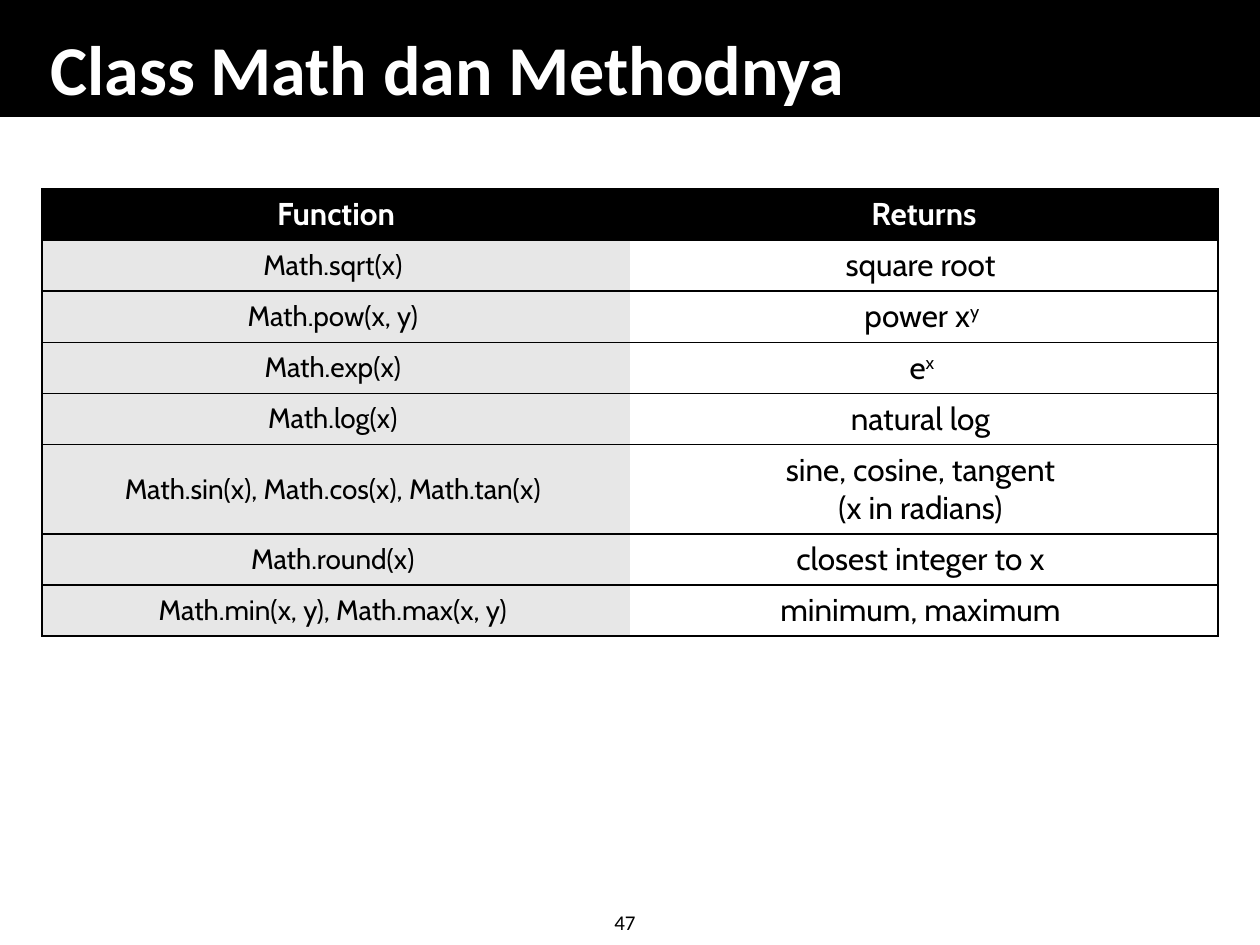
"""Build the slide that lists the methods of the Math class."""
from dataclasses import dataclass

from lxml import etree
from pptx import Presentation
from pptx import util as u
from pptx.dml.color import RGBColor
from pptx.enum import shapes, text
from pptx.oxml.ns import qn
from pptx.slide import Slide

PX = 914400 / 126
BLACK = RGBColor(0, 0, 0)
WHITE = RGBColor(255, 255, 255)
GRAY = RGBColor(0xE7, 0xE7, 0xE7)

HEADER = ("Function", "Returns")
METHODS = [
    ("Math.sqrt(x) ", "square root "),
    ("Math.pow(x, y) ", "power x^y "),
    ("Math.exp(x) ", "e^x "),
    ("Math.log(x) ", "natural log "),
    ("Math.sin(x), Math.cos(x), Math.tan(x) ", "sine, cosine, tangent \n(x in radians) "),
    ("Math.round(x) ", "closest integer to x "),
    ("Math.min(x, y), Math.max(x, y) ", "minimum, maximum "),
]


def px(*lengths):
    """Turn pixel lengths into EMU."""
    return [u.Emu(round(length * PX)) for length in lengths]


@dataclass
class SlideBuilder:
    """Hold the style and the current slide."""

    slide: Slide
    heading_font: str = "Calibri"
    table_font: str = "Cabin"

    def style(self, paragraph, font, size, color, bold=False):
        """Format every run of a paragraph."""
        for run in paragraph.runs:
            run.font.name = font
            run.font.size = u.Pt(size)
            run.font.bold = bold
            run.font.color.rgb = color

    def band(self, *box):
        """Add the black band behind the title."""
        shape = self.slide.shapes.add_shape(shapes.MSO_SHAPE.RECTANGLE, *px(*box))
        shape.shadow.inherit = False
        shape.fill.solid()
        shape.fill.fore_color.rgb = BLACK
        shape.line.color.rgb = BLACK
        shape.line.width = u.Pt(1)

    def title(self, wording, *box):
        """Fill the title placeholder and bring it to the front."""
        shape = self.slide.shapes.title
        shape.left, shape.top, shape.width, shape.height = px(*box)
        frame = shape.text_frame
        frame.text = wording
        frame.auto_size = text.MSO_AUTO_SIZE.NONE
        frame.vertical_anchor = text.MSO_ANCHOR.BOTTOM
        paragraph = frame.paragraphs[0]
        paragraph.alignment = text.PP_ALIGN.LEFT
        self.style(paragraph, self.heading_font, 40, WHITE, True)
        shape.element.getparent().append(shape.element)

    def page_number(self, wording, *box):
        """Add the page number."""
        frame = self.slide.shapes.add_textbox(*px(*box)).text_frame
        frame.text = wording
        frame.word_wrap = False
        self.style(frame.paragraphs[0], self.heading_font, 12, BLACK)

    def borders(self, cell, visible):
        """Draw the visible sides of a cell and hide the others."""
        properties = cell._tc.get_or_add_tcPr()
        for side in "LRTB":
            line = etree.SubElement(properties, qn(f"a:ln{side}"), w=str(u.Pt(1)))
            if side in visible:
                fill = etree.SubElement(line, qn("a:solidFill"))
                etree.SubElement(fill, qn("a:srgbClr"), val=str(BLACK))
            else:
                etree.SubElement(line, qn("a:noFill"))

    def cell(self, cell, wording, size, color, fill, sides, bold=False):
        """Fill one cell; wording after a caret is superscript."""
        base, _, power = wording.partition("^")
        cell.text_frame.text = ""
        paragraph = cell.text_frame.paragraphs[0]
        paragraph.text = base.replace("\n", "\v")
        if power:
            run = paragraph.add_run()
            run.text = power
            run._r.get_or_add_rPr().set("baseline", "30000")
        paragraph.alignment = text.PP_ALIGN.CENTER
        self.style(paragraph, self.table_font, size, color, bold)
        cell.vertical_anchor = text.MSO_ANCHOR.MIDDLE
        self.borders(cell, sides)
        cell.fill.solid()
        cell.fill.fore_color.rgb = fill

    def table(self, header, rows, left, top, width, line_height, tall_height):
        """Add the two-column table."""
        heights = [tall_height if "\n" in row[1] else line_height for row in [header, *rows]]
        frame = self.slide.shapes.add_table(
            len(heights), 2, *px(left, top, width, sum(heights)))
        table = frame.table
        table.first_row = table.horz_banding = False
        for table_row, height in zip(table.rows, heights):
            table_row.height = px(height)[0]
        columns = ((16, GRAY, "LTB"), (18, WHITE, "RTB"))
        for column, (size, fill, sides) in enumerate(columns):
            self.cell(table.cell(0, column), header[column], 18, WHITE, BLACK, sides, True)
            for index, row in enumerate(rows, 1):
                self.cell(table.cell(index, column), row[column], size, BLACK, fill, sides)


def main():
    """Build and save the presentation."""
    presentation = Presentation()
    presentation.slide_width, presentation.slide_height = px(1260, 945)
    builder = SlideBuilder(presentation.slides.add_slide(presentation.slide_layouts[5]))
    builder.band(0, 0, 1260, 116)
    builder.page_number("47", 602, 903, 52, 38)
    builder.title("Class Math dan Methodnya", 38, 26, 1179, 90)
    builder.table(HEADER, METHODS, 42, 189, 1176, 51, 89)
    presentation.save("out.pptx")


if __name__ == "__main__":
    main()
